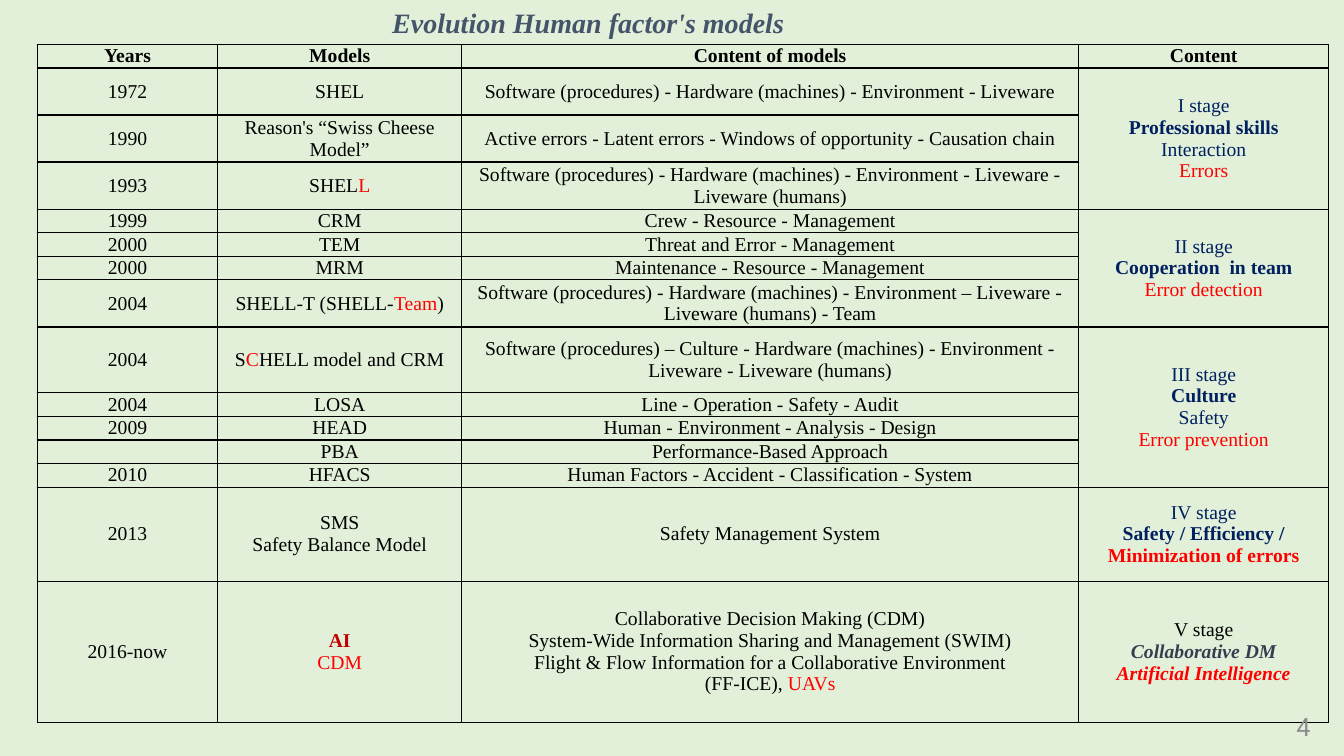
from lxml.etree import SubElement
from pptx import Presentation
from pptx.dml.color import RGBColor
from pptx.enum.text import MSO_ANCHOR, MSO_AUTO_SIZE, PP_ALIGN
from pptx.oxml.ns import qn
from pptx.util import Inches, Pt

BLACK, NAVY, RED = "000000", "002060", "FF0000"
SERIF = "Times New Roman"
COLUMN_SHARES = [1.79, 2.42, 6.12, 2.48]
ROW_UNITS = [1, 2, 2, 2, 1, 1, 1, 2, 2.8, 1, 1, 1, 1, 4, 6]


def red(text, **style):
    return text, {"color": RED, **style}


def navy(text, **style):
    return text, {"color": NAVY, **style}


def bold(text):
    return text, {"bold": True}


MODELS = [
    [[[bold(heading)]] for heading in ("Years", "Models", "Content of models")],
    ["1972", "SHEL", "Software (procedures) - Hardware (machines) - Environment - Liveware"],
    ["1990", "Reason's “Swiss Cheese Model”",
     "Active errors - Latent errors - Windows of opportunity - Causation chain"],
    ["1993", [["SHEL", red("L")]],
     "Software (procedures) - Hardware (machines) - Environment - Liveware - Liveware (humans)"],
    ["1999", "CRM", "Crew - Resource - Management"],
    ["2000", "TEM", "Threat and Error - Management"],
    ["2000", "MRM", "Maintenance - Resource - Management"],
    ["2004", [["SHELL-T (SHELL-", red("Team"), ")"]],
     "Software (procedures) - Hardware (machines) - Environment – Liveware - Liveware (humans) - Team"],
    ["2004", [["S", red("C"), "HELL model and CRM"]],
     "Software (procedures) – Culture - Hardware (machines) - Environment - Liveware - Liveware (humans)"],
    ["2004", "LOSA", "Line - Operation - Safety - Audit"],
    ["2009", "HEAD", "Human - Environment - Analysis - Design"],
    ["", "PBA", "Performance-Based Approach"],
    ["2010", "HFACS", "Human Factors - Accident - Classification - System"],
    ["2013", [["SMS"], ["Safety Balance Model"]], "Safety Management System"],
    ["2016-now", [[("AI", {"color": "C00000", "bold": True})], [red("CDM")]],
     [["Collaborative Decision Making (CDM)"],
      ["System-Wide Information Sharing and Management (SWIM)"],
      ["Flight & Flow Information for a Collaborative Environment"],
      ["(FF-ICE), ", red("UAVs")]]],
]
STAGES = [
    (1, [[[bold("Content")]]][0]),
    (3, [[navy("I stage")], [navy("Professional skills", bold=True)],
         [navy("Interaction")], [red("Errors")]]),
    (4, [[navy("II stage")], [navy("Cooperation  in team", bold=True)],
         [red("Error detection")]]),
    (5, [[navy("III stage")], [navy("Culture", bold=True)],
         [navy("Safety")], [red("Error prevention")]]),
    (1, [[navy("IV stage")], [navy("Safety / Efficiency /", bold=True)],
         [red("Minimization of errors", bold=True)]]),
    (1, [["V stage"], [("Collaborative DM", {"color": "333F50", "bold": True, "italic": True})],
         [red("Artificial Intelligence", bold=True, italic=True)]]),
]


def rgb(value):
    return RGBColor.from_string(value)


def add_span(para, text, size=14, font=SERIF, color=BLACK, bold=False, italic=False):
    span = para.add_run()
    span.text = text
    span.font.size = Pt(size)
    span.font.name = font
    span.font.color.rgb = rgb(color)
    span.font.bold = bold
    span.font.italic = italic


def write(frame, content, align=PP_ALIGN.CENTER, **style):
    paragraphs = [[content]] if isinstance(content, str) else content
    for index, pieces in enumerate(paragraphs):
        para = frame.add_paragraph() if index else frame.paragraphs[0]
        para.alignment = align
        for piece in pieces:
            text, own = (piece, {}) if isinstance(piece, str) else piece
            if text:
                add_span(para, text, **{**style, **own})
            else:
                SubElement(para._p, qn("a:endParaRPr"), sz="1400")


def draw_borders(cell):
    properties = cell._tc.get_or_add_tcPr()
    for position, side in enumerate(("a:lnL", "a:lnR", "a:lnT", "a:lnB")):
        line = SubElement(properties, qn(side), w=str(Pt(1)))
        fill = SubElement(line, qn("a:solidFill"))
        SubElement(fill, qn("a:srgbClr"), val=BLACK)
        properties.insert(position, line)


def format_cell(cell):
    cell.margin_left = cell.margin_right = Inches(0.06)
    cell.margin_top = cell.margin_bottom = 0
    cell.vertical_anchor = MSO_ANCHOR.MIDDLE
    cell.fill.background()
    draw_borders(cell)


def add_title(page, left, top, width, height):
    title = page.shapes.title
    title.left, title.top = Inches(left), Inches(top)
    title.width, title.height = Inches(width), Inches(height)
    frame = title.text_frame
    frame.word_wrap = False
    frame.auto_size = MSO_AUTO_SIZE.SHAPE_TO_FIT_TEXT
    frame.vertical_anchor = MSO_ANCHOR.TOP
    write(frame, "Evolution Human factor's models", size=20, color="44546A", bold=True, italic=True)


def add_models_table(page, left, top, width, height):
    table = page.shapes.add_table(len(ROW_UNITS), len(COLUMN_SHARES), Inches(left),
                                  Inches(top), Inches(width), Inches(height)).table
    table.first_row = table.horz_banding = False
    for column, share in zip(table.columns, COLUMN_SHARES):
        column.width = Inches(width * share / sum(COLUMN_SHARES))
    for row, units in zip(table.rows, ROW_UNITS):
        row.height = Inches(height * units / sum(ROW_UNITS))
    for cell in table.iter_cells():
        format_cell(cell)
    for row_index, contents in enumerate(MODELS):
        for column_index, content in enumerate(contents):
            write(table.cell(row_index, column_index).text_frame, content)
    first = 0
    for span_rows, content in STAGES:
        cell = table.cell(first, 3)
        if span_rows > 1:
            cell.merge(table.cell(first + span_rows - 1, 3))
        write(cell.text_frame, content)
        first += span_rows


def add_page_number(page, left, top, width, height):
    box = page.shapes.add_textbox(Inches(left), Inches(top), Inches(width), Inches(height))
    box.text_frame.word_wrap = False
    box.text_frame.auto_size = MSO_AUTO_SIZE.SHAPE_TO_FIT_TEXT
    write(box.text_frame, "4", align=PP_ALIGN.LEFT, size=18, font="Roboto", color="8C8C8C")


def main():
    deck = Presentation()
    deck.slide_width, deck.slide_height = Inches(13.33), Inches(7.5)
    page = deck.slides.add_slide(deck.slide_layouts[5])
    page.background.fill.solid()
    page.background.fill.fore_color.rgb = rgb("E2F0D9")
    add_title(page, 3.78, 0, 4.11, 0.44)
    add_models_table(page, 0.37, 0.44, 12.81, 6.72)
    add_page_number(page, 12.76, 7.01, 0.49, 0.4)
    deck.save("out.pptx")


if __name__ == "__main__":
    main()
